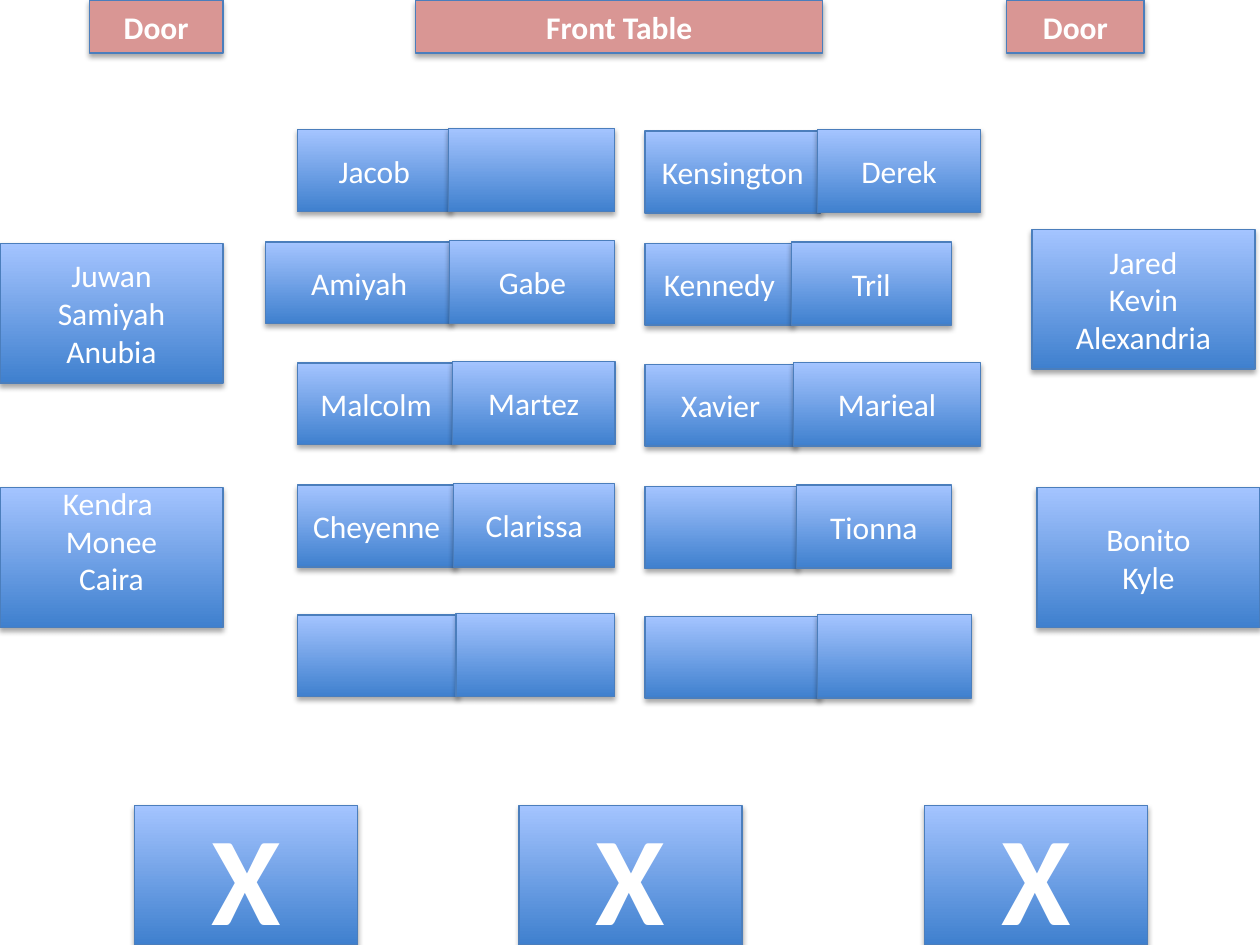
from lxml import etree
from pptx import Presentation
from pptx.dml.color import RGBColor
from pptx.enum.shapes import MSO_SHAPE as Shape
from pptx.enum.text import MSO_ANCHOR as Anchor, PP_ALIGN as Align
from pptx.oxml.ns import qn
from pptx.util import Inches, Pt

PINK = RGBColor(0xD9, 0x96, 0x94)
DEEP_BLUE = RGBColor(0x3F, 0x80, 0xCE)
PALE_BLUE = RGBColor(0xA4, 0xC4, 0xFF)
OUTLINE = RGBColor(0x4B, 0x7E, 0xBC)
WHITE = RGBColor(0xFF, 0xFF, 0xFF)

FONT = "Calibri"
TABLE_WIDTH, TABLE_HEIGHT = 1.77, 1.11
DESK_HEIGHT = 0.65
DESK_OVERLAP = 0.02
ROW_TOPS = [1.03, 1.92, 2.88, 3.85, 4.88]

# Each row of desks: left edge, seam, right edge, left name, right name
LEFT_DESKS = [
    (2.36, 3.56, 4.88, "Jacob", ""),
    (2.11, 3.57, 4.88, "Amiyah", "Gabe"),
    (2.36, 3.59, 4.88, "Malcolm", "Martez"),
    (2.36, 3.60, 4.88, "Cheyenne", "Clarissa"),
    (2.36, 3.62, 4.88, "", ""),
]
RIGHT_DESKS = [
    (5.12, 6.49, 7.78, "Kensington", "Derek"),
    (5.12, 6.28, 7.55, "Kennedy", "Tril"),
    (5.12, 6.30, 7.78, "Xavier", "Marieal"),
    (5.12, 6.32, 7.55, "", "Tionna"),
    (5.12, 6.49, 7.71, "", ""),
]


def add_shadow(shape):
    """Give the shape a soft shadow straight below it."""
    shape.shadow.inherit = False
    effects = shape._element.spPr.find(qn("a:effectLst"))
    shadow = etree.SubElement(
        effects, qn("a:outerShdw"), blurRad=str(Pt(3.1)), dist=str(Pt(1.8)),
        dir="5400000", rotWithShape="0")
    color = etree.SubElement(shadow, qn("a:srgbClr"), val="000000")
    etree.SubElement(color, qn("a:alpha"), val="35000")


def add_box(slide, left, top, width, height, lines=(), size=18, bold=False,
            solid=None):
    """Add an outlined box, blue gradient unless a solid colour is given."""
    shape = slide.shapes.add_shape(
        Shape.RECTANGLE, Inches(left), Inches(top), Inches(width), Inches(height))
    if solid is not None:
        shape.fill.solid()
        shape.fill.fore_color.rgb = solid
    else:
        shape.fill.gradient()
        shape.fill.gradient_angle = 90
        for stop, color in zip(shape.fill.gradient_stops, (DEEP_BLUE, PALE_BLUE)):
            stop.color.rgb = color
    shape.line.color.rgb = OUTLINE
    shape.line.width = Pt(0.75)
    add_shadow(shape)

    frame = shape.text_frame
    frame.word_wrap = True
    frame.vertical_anchor = Anchor.MIDDLE
    for index, line in enumerate(lines):
        paragraph = frame.add_paragraph() if index else frame.paragraphs[0]
        paragraph.alignment = Align.CENTER
        run = paragraph.add_run()
        run.text = line
        run.font.name = FONT
        run.font.size = Pt(size)
        run.font.bold = bold
        run.font.color.rgb = WHITE
    return shape


def add_front_wall(slide, top, height):
    for left, width, label in [(0.71, 1.06, "Door"), (7.99, 1.09, "Door"),
                               (3.3, 3.23, "Front Table")]:
        add_box(slide, left, top, width, height, [label], bold=True, solid=PINK)


def add_desk_block(slide, rows, offset=0):
    """Add paired desks; the right desk of a pair covers the seam."""
    for row_top, (left, seam, right, left_name, right_name) in zip(ROW_TOPS, rows):
        top = row_top + offset
        add_box(slide, left, top, seam - left + DESK_OVERLAP, DESK_HEIGHT,
                [left_name] if left_name else [])
        add_box(slide, seam, top - 0.01, right - seam, DESK_HEIGHT + 0.01,
                [right_name] if right_name else [])


def add_side_tables(slide):
    for left, top, names in [
        (0, 1.93, ["Juwan", "Samiyah", "Anubia"]),
        (8.19, 1.82, ["Jared", "Kevin", "Alexandria"]),
        (8.23, 3.87, ["Bonito", "Kyle"]),
    ]:
        add_box(slide, left, top, TABLE_WIDTH, TABLE_HEIGHT, names)
    # The names at this table sit above its middle
    raised = add_box(slide, 0, 3.87, TABLE_WIDTH, TABLE_HEIGHT,
                     ["Kendra ", "Monee", "Caira"])
    raised.text_frame.margin_top = 0
    raised.text_frame.margin_bottom = Inches(0.27)


def add_back_tables(slide, top):
    for left in (1.07, 4.12, 7.34):
        add_box(slide, left, top, TABLE_WIDTH, TABLE_HEIGHT, ["X"], size=72, bold=True)


def main():
    presentation = Presentation()
    presentation.slide_width = Inches(10)
    presentation.slide_height = Inches(7.5)
    slide = presentation.slides.add_slide(presentation.slide_layouts[6])

    add_front_wall(slide, 0, 0.42)
    add_side_tables(slide)
    add_desk_block(slide, RIGHT_DESKS, offset=0.01)
    add_desk_block(slide, LEFT_DESKS)
    add_back_tables(slide, 6.39)

    presentation.save("out.pptx")


if __name__ == "__main__":
    main()
